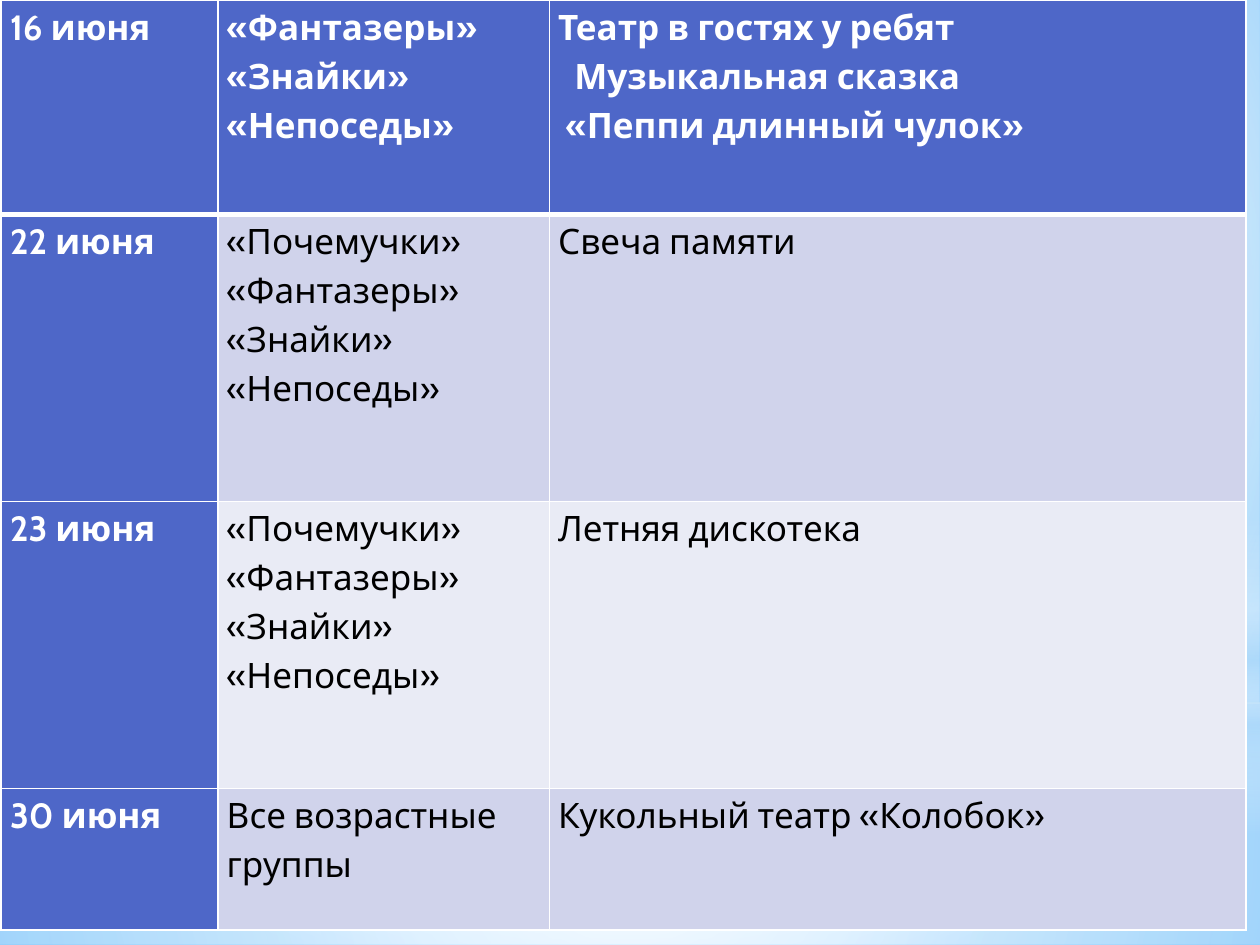
from lxml import etree
from pptx import Presentation
from pptx import util as u
from pptx.dml.color import RGBColor
from pptx.enum import shapes
from pptx.oxml import ns

COLORS = {"white": "FFFFFF", "black": "000000", "head": "4E67C8", "band": "D0D3EB",
          "pale": "E9EBF5", "sky": "9ED5FF", "deep": "5BB9FF", "mist": "B4DCFA"}
CENTER = (50, 50, 50, 50)


def add(parent, tag, **attributes):
    return etree.SubElement(parent, ns.qn(tag), {k: str(v) for k, v in attributes.items()})


def set_gradient(properties, stops, focus):
    """Swap a solid fill for stops (position, colour, opacity); no focus means top to bottom."""
    solid = properties.find(ns.qn("a:solidFill"))
    gradient = etree.Element(ns.qn("a:gradFill"), rotWithShape="1")
    stop_list = add(gradient, "a:gsLst")
    for position, color, opacity in stops:
        stop = add(stop_list, "a:gs", pos=position * 1000)
        add(add(stop, "a:srgbClr", val=COLORS[color]), "a:alpha", val=opacity * 1000)
    if focus:
        sides = {side: share * 1000 for side, share in zip("ltrb", focus)}
        add(add(gradient, "a:path", path="circle"), "a:fillToRect", **sides)
    else:
        add(gradient, "a:lin", ang=90 * 60000, scaled=0)
    properties.replace(solid, gradient)


deck = Presentation()
deck.slide_width, deck.slide_height = u.Inches(10), u.Inches(7.5)
page = deck.slides.add_slide(deck.slide_layouts[6])

# Background
page.background.fill.solid()
set_gradient(page.background._cSld.find(".//" + ns.qn("p:bgPr")),
             [(0, "sky", 100), (60, "white", 100), (100, "deep", 100)], (20, 10, 20, 60))

# Full-width sky layers: shape, top, height, stops, focus
RECT, OVAL = shapes.MSO_SHAPE.RECTANGLE, shapes.MSO_SHAPE.OVAL
layers = [
    (RECT, 5.58, 1.92, [(0, "white", 91), (37, "white", 76), (100, "mist", 79)], CENTER),
    (RECT, 0, 5.58, [(0, "white", 89), (48, "white", 62), (100, "mist", 79)], CENTER),
    (RECT, 4.12, 2.5, [(0, "white", 0), (29, "white", 30), (45, "mist", 40),
                       (55, "white", 26), (65, "mist", 60), (100, "white", 0)], None),
    (OVAL, 1.75, 5.58, [(0, "white", 100), (56, "white", 0)], CENTER),
]
for kind, top, height, stops, focus in layers:
    layer = page.shapes.add_shape(kind, 0, u.Inches(top), deck.slide_width, u.Inches(height))
    layer.shadow.inherit = False
    layer.line.fill.background()
    layer.fill.solid()
    set_gradient(layer._element.spPr, stops, focus)

# Schedule: date, groups, event
groups = ["«Почемучки»", "«Фантазеры» «Знайки»", "«Непоседы»"]
schedule = [
    (["16 июня"], ["«Фантазеры» «Знайки»", "«Непоседы»"],
     ["Театр в гостях у ребят", "Музыкальная сказка", "«Пеппи длинный чулок»"]),
    (["22 июня"], groups, ["Свеча памяти"]),
    (["23 июня"], groups, ["Летняя дискотека"]),
    (["30 июня"], ["Все возрастные группы"], ["Кукольный театр «Колобок»"]),
]
indents = {"Музыкальная сказка": 0.13, "«Пеппи длинный чулок»": 0.06}
columns, rows = [1.72, 2.63, 5.53], [1.7, 2.28, 2.28, 1.12]
margins = {"margin_left": 0.07, "margin_right": 0.07, "margin_top": 0, "margin_bottom": 0}

table = page.shapes.add_table(len(rows), len(columns), u.Inches(0.01), 0,
                              u.Inches(sum(columns)), u.Inches(sum(rows))).table
for column, width in zip(table.columns, columns):
    column.width = u.Inches(width)
for row, height in zip(table.rows, rows):
    row.height = u.Inches(height)

for r, entry in enumerate(schedule):
    for c, lines in enumerate(entry):
        cell = table.cell(r, c)
        heading = r == 0 or c == 0
        for name, value in margins.items():
            setattr(cell, name, u.Inches(value))
        cell.fill.solid()
        fill = "head" if heading else "band" if r % 2 else "pale"
        cell.fill.fore_color.rgb = RGBColor.from_string(COLORS[fill])

        # White borders, thick under the first row
        properties = cell._tc.get_or_add_tcPr()
        for place, side in enumerate("LRTB"):
            thick = (r, side) in [(0, "B"), (1, "T")]
            border = etree.Element(ns.qn("a:ln" + side), w=str(u.Pt(3 if thick else 1)))
            add(add(border, "a:solidFill"), "a:srgbClr", val=COLORS["white"])
            properties.insert(place, border)

        # Text
        frame = cell.text_frame
        font_format = {"name": "Cabin", "size": u.Pt(20), "bold": heading}
        for i, line in enumerate(lines):
            para = frame.add_paragraph() if i else frame.paragraphs[0]
            para.line_spacing = 1.15
            if line in indents:
                para._p.get_or_add_pPr().set("marL", str(u.Inches(indents[line])))
            span = para.add_run()
            span.text = line
            for name, value in font_format.items():
                setattr(span.font, name, value)
            span.font.color.rgb = RGBColor.from_string(COLORS["white" if heading else "black"])

deck.save("out.pptx")
